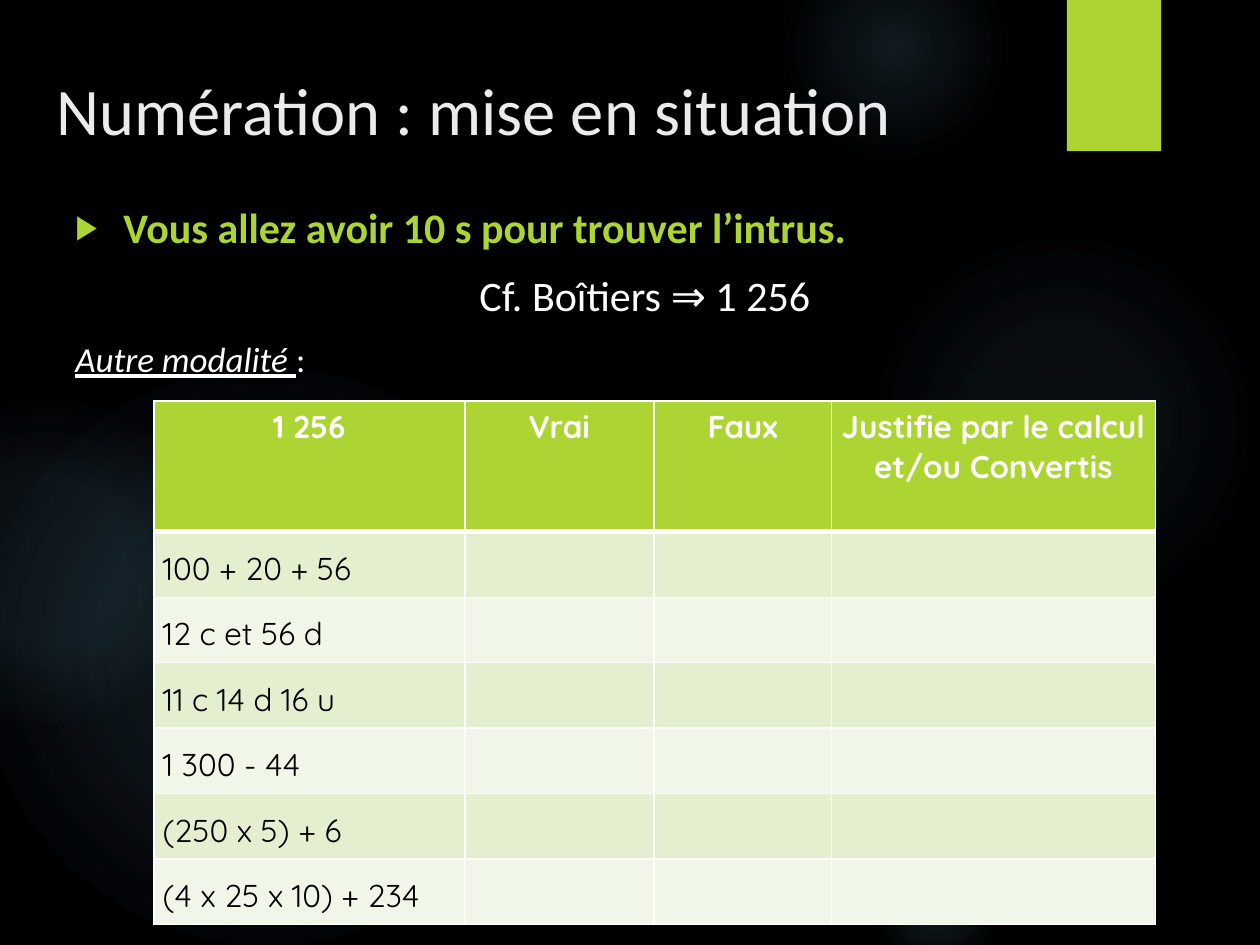
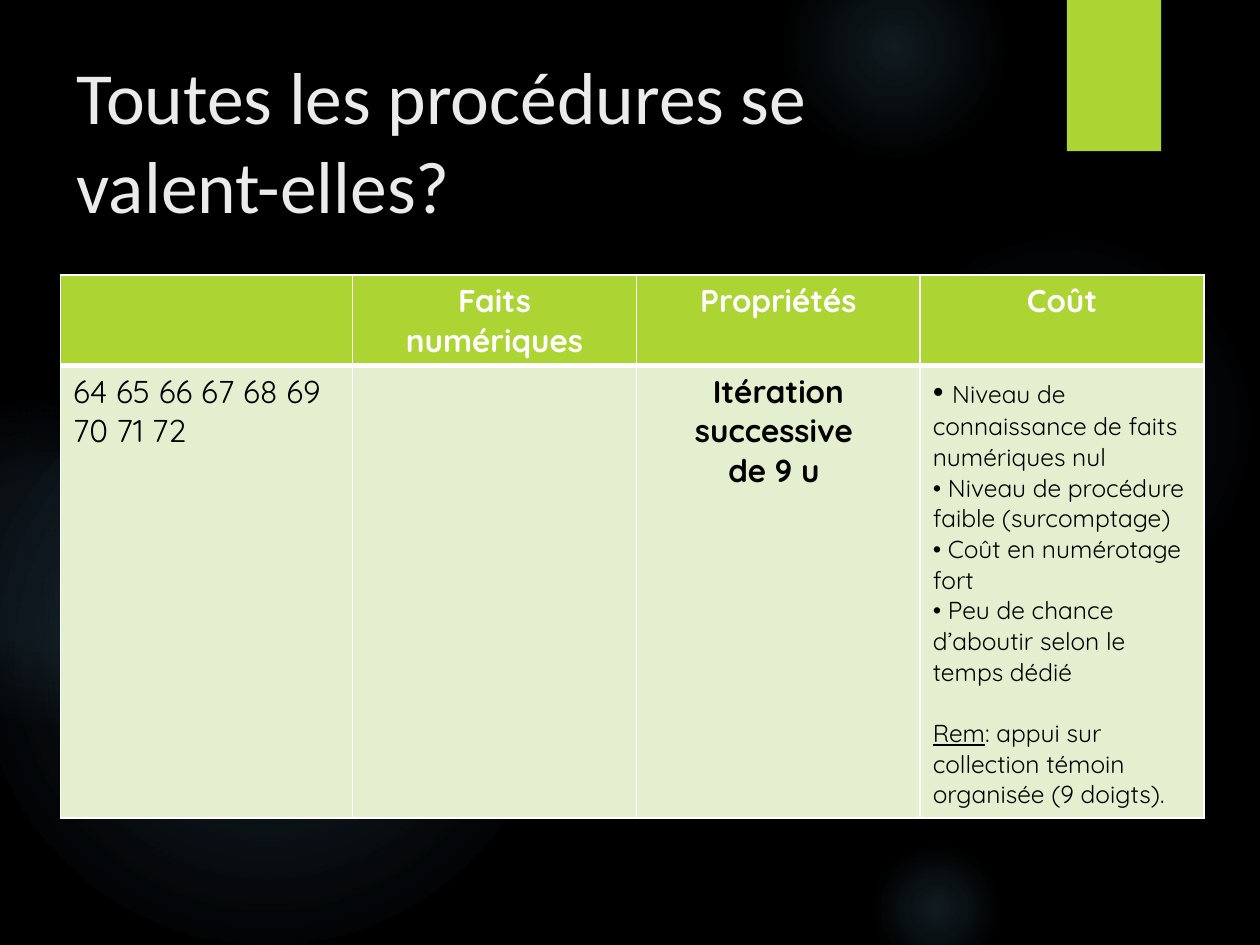
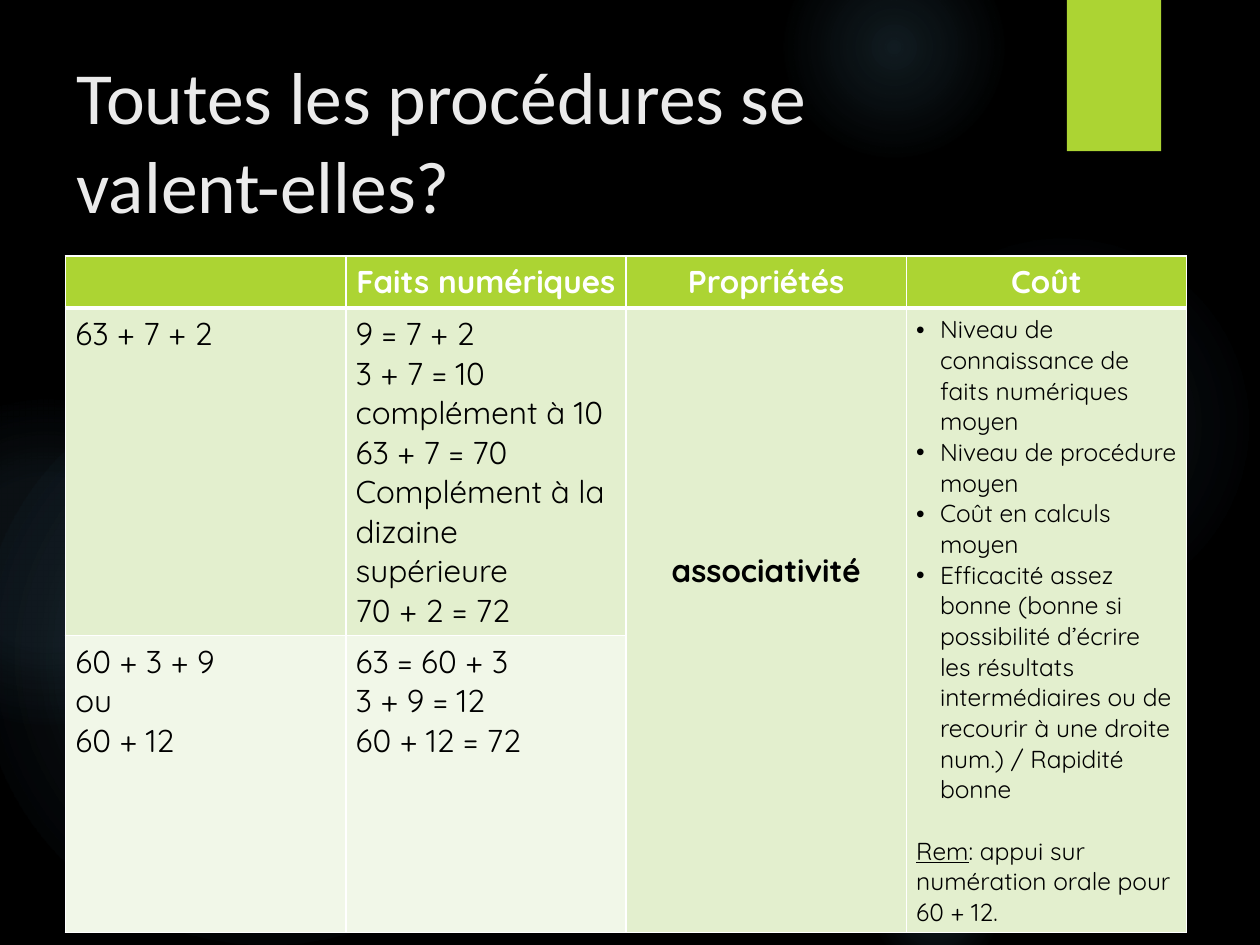
from lxml.etree import SubElement
from pptx import Presentation
from pptx.dml.color import RGBColor
from pptx.enum.shapes import MSO_SHAPE
from pptx.enum.text import MSO_ANCHOR, PP_ALIGN
from pptx.oxml.ns import qn
from pptx.util import Cm, Pt

OVAL, RECT = MSO_SHAPE.OVAL, MSO_SHAPE.RECTANGLE
MID, TOP = PP_ALIGN.CENTER, MSO_ANCHOR.TOP

LIME, WHITE, BLACK = "ACD433", "FFFFFF", "000000"
PALE, MIST = "E3EFCE", "F1F7E8"
GLOW, CHALK = "7AC4F0", "EBEBEB"

# left, top, diameter in cm, then (position, opacity) stops in percent
GLOWS = [
    (17.5, 4.65, 7.82, [(0, 7), (36, 6), (69, 0)]),
    (15.8, -1.27, 4.45, [(0, 14), (36, 7), (73, 0)]),
    (17.5, 16.94, 2.74, [(0, 14), (36, 7), (66, 0)]),
    (-0.43, 7.42, 11.63, [(0, 11), (36, 10), (75, 0)]),
    (-2.34, 8.05, 6.55, [(0, 8), (36, 8), (72, 0)]),
]

HEAD = {"name": "Quicksand", "size": Pt(18), "bold": True, "color": WHITE}
CELL = {**HEAD, "bold": False, "color": BLACK}
SMALL = {"size": Pt(14)}
BOLD = {"bold": True}
LINED = {"underline": True}
CENTER = {"alignment": MID}
DOT = {"bullet": {"char": "•", "hang": 0.48}}


def hue(code):
    return RGBColor.from_string(code)


def node(parent, tag, **attrs):
    return SubElement(parent, qn(tag), {k: str(v) for k, v in attrs.items()})


def tint(parent, code, alpha=None):
    """Add an sRGB colour, with opacity in percent if given."""
    color = node(parent, "a:srgbClr", val=code)
    if alpha is not None:
        node(color, "a:alpha", val=alpha * 1000)


def style(font, fmt):
    for key, val in fmt.items():
        if key == "color":
            font.color.rgb = hue(val)
        else:
            setattr(font, key, val)


def indent(para, left, first=0):
    props = para._p.get_or_add_pPr()
    props.set("marL", str(Cm(left)))
    props.set("indent", str(Cm(first)))
    return props


def mark(para, char, hang, color=None, size=100):
    props = indent(para, hang, -hang)
    if color:
        tint(node(props, "a:buClr"), color)
    node(props, "a:buSzPct", val=size * 1000)
    node(props, "a:buFont", typeface="Arial")
    node(props, "a:buChar", char=char)


def write(frame, paras, base):
    """Fill a frame; a paragraph is a string or (runs, format),
    and runs are a string or a list of (text, font format)."""
    for i, item in enumerate(paras):
        runs, fmt = (item, {}) if isinstance(item, str) else item
        para = frame.paragraphs[0] if i == 0 else frame.add_paragraph()
        fmt = dict(fmt)
        bullet, left = fmt.pop("bullet", None), fmt.pop("left", None)
        for key, val in fmt.items():
            setattr(para, key, val)
        if bullet:
            mark(para, **bullet)
        if left:
            indent(para, left)
        for text, font in [(runs, {})] if isinstance(runs, str) else runs:
            run = para.add_run()
            run.text = text
            style(run.font, {**base, **font})


def frame_cell(cell, top, bottom):
    props = cell._tc.get_or_add_tcPr()
    for side, width in zip("LRTB", (1, 1, top, bottom)):
        line = node(props, f"a:ln{side}", w=Pt(width))
        tint(node(line, "a:solidFill"), WHITE)


class Deck:
    def __init__(self):
        self.prs = Presentation()
        self.prs.slide_width, self.prs.slide_height = Cm(25.4), Cm(19.05)
        self.slide = None

    def page(self):
        """Start a slide with its dark ground, glows and green tag."""
        self.slide = self.prs.slides.add_slide(self.prs.slide_layouts[6])
        ground = self.slide.background.fill
        ground.solid()
        ground.fore_color.rgb = hue(BLACK)
        for left, top, size, stops in GLOWS:
            self.glow(left, top, size, stops)
        self.tag()

    def shape(self, kind, *box):
        shape = self.slide.shapes.add_shape(kind, *map(Cm, box))
        shape.shadow.inherit = False
        shape.line.fill.background()
        return shape

    def glow(self, left, top, size, stops):
        shape = self.shape(OVAL, left, top, size, size)
        shape.fill.background()
        props = shape._element.spPr
        grad = node(props, "a:gradFill", rotWithShape=1)
        steps = node(grad, "a:gsLst")
        for pos, alpha in stops + [(100, 0)]:
            tint(node(steps, "a:gs", pos=pos * 1000), GLOW, alpha)
        focus = node(grad, "a:path", path="circle")
        node(focus, "a:fillToRect", l=50000, t=50000, r=50000, b=50000)
        props.replace(props.find(qn("a:noFill")), grad)

    def tag(self):
        shape = self.shape(RECT, 21.51, 0, 1.9, 3.05)
        shape.fill.solid()
        shape.fill.fore_color.rgb = hue(LIME)
        effects = shape._element.spPr.find(qn("a:effectLst"))
        shade = node(effects, "a:outerShdw", blurRad=Pt(3), dist=Pt(2),
                     dir=90 * 60000, rotWithShape=0)
        tint(shade, BLACK, 45)

    def text(self, box, paras, **base):
        frame = self.slide.shapes.add_textbox(*map(Cm, box)).text_frame
        frame.word_wrap = True
        frame.vertical_anchor = TOP
        write(frame, paras, {"name": "Calibri", **base})

    def title(self, text, left, top, width, size):
        self.text((left, top, width, 3.89), [text], size=Pt(size), color=CHALK)

    def table(self, left, top, cols, rows, heads, body, pad=None):
        """Draw a table; body lists rows of cells, each a list of paragraphs."""
        table = self.slide.shapes.add_table(
            len(rows), len(cols), Cm(left), Cm(top),
            Cm(sum(cols)), Cm(sum(rows))).table
        table.horz_banding = False
        for col, width in zip(table.columns, cols):
            col.width = Cm(width)
        for row, height in zip(table.rows, rows):
            row.height = Cm(height)
        lines = [[[(head, CENTER)] if head else [] for head in heads]] + body
        for r, line in enumerate(lines):
            for c, paras in enumerate(line):
                cell = table.cell(r, c)
                frame_cell(cell, 3 if r == 1 else 1, 3 if r == 0 else 1)
                cell.fill.solid()
                shade = LIME if r == 0 else (MIST, PALE)[r % 2]
                cell.fill.fore_color.rgb = hue(shade)
                for key, val in (pad or {}).items():
                    if r or key in ("margin_left", "margin_right"):
                        setattr(cell, key, Cm(val))
                write(cell.text_frame, paras, CELL if r else HEAD)
        return table


def hunt(deck):
    deck.page()
    deck.title("Numération : mise en situation", 0.89, 1.27, 20.6, 38)
    gap = {"space_before": Pt(10)}
    arrow = {"char": "▶", "hang": 0.97, "color": LIME, "size": 80}
    deck.text((1.27, 3.94, 22.86, 14), [
        ([("Vous allez avoir 10 s pour trouver l’intrus.",
           {"color": LIME, **BOLD})], {**gap, "bullet": arrow}),
        ("Cf. Boîtiers ⇒ 1 256", {**gap, **CENTER, "left": 0.6}),
        ([("Autre modalité ", {"size": Pt(20), "italic": True, **LINED}),
          (":", {"size": Pt(20)})], gap),
    ], size=Pt(24), color=WHITE)
    sums = ["100 + 20 + 56", "12 c et 56 d", "11 c 14 d 16 u",
            "1 300 - 44", "(250 x 5) + 6", "(4 x 25 x 10) + 234"]
    sides = ("left", "right", "top", "bottom")
    deck.table(
        3.1, 8.08, [6.27, 3.81, 3.58, 6.53], [2.64] + [1.32] * len(sums),
        ["1 256", "Vrai", "Faux", "Justifie par le calcul et/ou Convertis"],
        [[[(text, {"line_spacing": 1.2})], [], [], []] for text in sums],
        {f"margin_{side}": 0.18 for side in sides})


def compare(deck, left, top, cols, rows, body, pad=None):
    """Add a slide that weighs procedures against each other."""
    deck.page()
    deck.title("Toutes les procédures se valent-elles?", 1.3, 0.91, 19.61, 42)
    heads = ["", "Faits numériques", "Propriétés", "Coût"]
    return deck.table(left, top, cols, rows, heads, body, pad)


def note(text, gap=17.5):
    """Closing remark, one line below the list."""
    return ([("Rem", {**SMALL, **LINED}), (f": {text}", SMALL)],
            {"space_before": Pt(gap)})


def count(deck):
    costs = ["Niveau de procédure faible (surcomptage)",
             "Coût en numérotage fort",
             "Peu de chance d’aboutir selon le temps dédié"]
    compare(deck, 1.22, 5.54, [5.89] + [5.72] * 3, [1.83, 9.12], [[
        ["64 65 66 67 68 69 70 71 72"],
        [],
        [([(text, BOLD)], CENTER)
         for text in ("Itération successive ", "de 9 u ")],
        [([("• ", {}),
           ("Niveau de connaissance de faits numériques nul", SMALL)], {})]
        + [([(f"• {cost}", SMALL)], {}) for cost in costs]
        + [note("appui sur collection témoin organisée (9 doigts).")],
    ]])


def split(deck):
    costs = ["Niveau de connaissance de faits numériques moyen",
             "Niveau de procédure moyen",
             "Coût en calculs moyen",
             "Efficacité assez bonne (bonne si possibilité d’écrire les "
             "résultats intermédiaires ou de recourir à une droite num.) / "
             "Rapidité bonne"]
    table = compare(deck, 1.32, 5.16, [5.65] * 4, [1.05, 6.6, 5.99], [
        [["63 + 7 + 2"],
         ["9 = 7 + 2", "3 + 7 = 10 complément à 10", "63 + 7 = 70",
          "Complément à la dizaine supérieure", "70 + 2 = 72"],
         [([("associativité", BOLD)], CENTER)],
         [([(cost, SMALL)], DOT) for cost in costs]
         + [note("appui sur numération orale pour 60 + 12.")]],
        [["60 + 3 + 9", "ou", "60 + 12"],
         ["63 = 60 + 3", "3 + 9 = 12", "60 + 12 = 72"],
         [], []],
    ], {"margin_left": 0.2, "margin_right": 0.2})
    for col in (2, 3):
        table.cell(1, col).merge(table.cell(2, col))
    table.cell(1, 2).margin_top = Cm(4.89)


def main():
    deck = Deck()
    for build in (hunt, count, split):
        build(deck)
    deck.prs.save("out.pptx")


if __name__ == "__main__":
    main()
